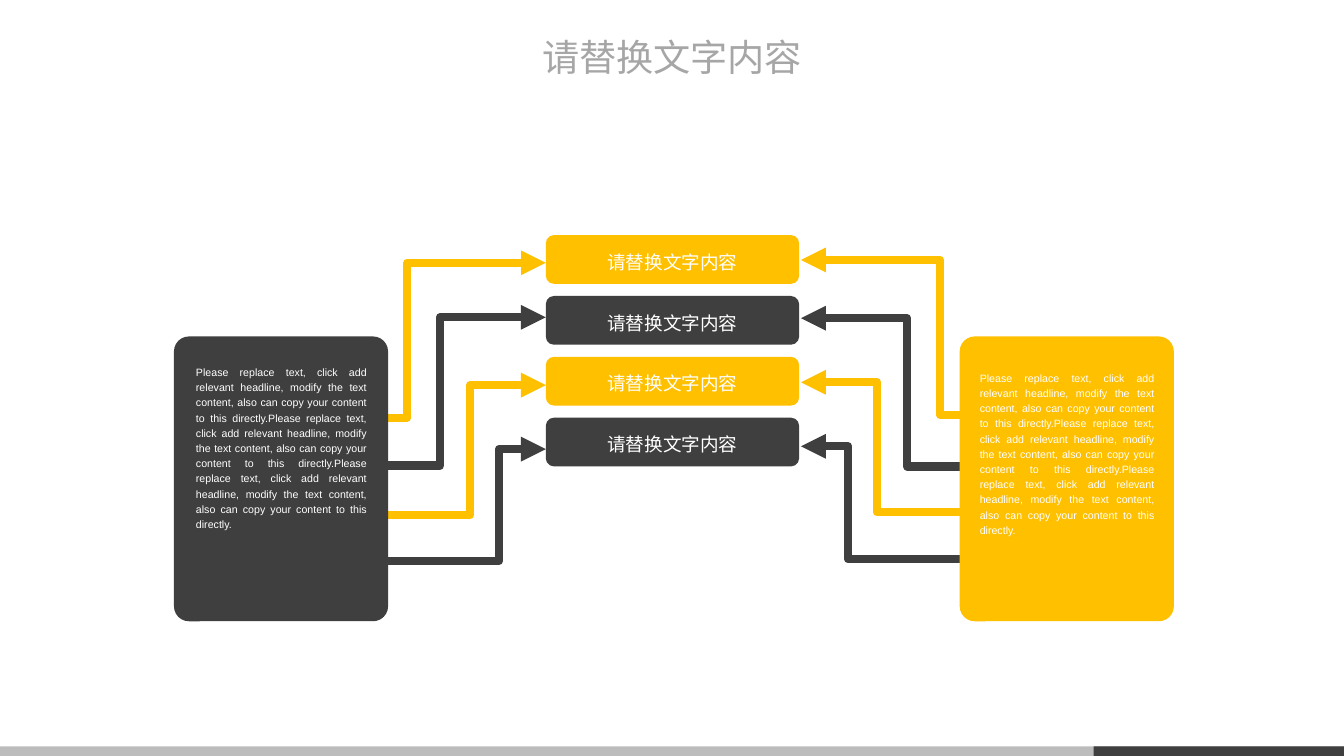
import pptx
import pptx.util
import pptx.oxml.ns
import pptx.dml.color
import pptx.enum.shapes
import pptx.enum.text
import lxml.etree

Inches, Pt = pptx.util.Inches, pptx.util.Pt
SHAPE = pptx.enum.shapes.MSO_SHAPE
ALIGN = pptx.enum.text.PP_ALIGN
ANCHOR = pptx.enum.text.MSO_ANCHOR
qn = pptx.oxml.ns.qn

# Content
TITLE = "请替换文字内容"
LABELS = ["请替换文字内容"] * 4
SENTENCE = ("Please replace text, click add relevant headline, modify the text content, "
            "also can copy your content to this directly.")
PANEL_TEXT = SENTENCE * 3

COLORS = {"yellow": "FFC000", "dark": "3F3F3F", "silver": "BCBCBC",
          "title": "A6A6A6", "white": "FFFFFF"}
ROW_COLORS = ["yellow", "dark", "yellow", "dark"]

# Layout in inches
PAGE_WIDTH, PAGE_HEIGHT = 14.06, 7.91
FOOTER_BARS = [(0, PAGE_WIDTH, "silver"), (11.44, 2.62, "dark")]
FOOTER_HEIGHT = 0.1
LABEL_LEFT, LABEL_WIDTH, LABEL_HEIGHT = 5.71, 2.65, 0.51
FIRST_LABEL_TOP, LAST_LABEL_TOP = 2.46, 4.37
PANEL_TOP, PANEL_WIDTH, PANEL_HEIGHT = 3.52, 2.24, 2.98
PANELS = [  # left, colour, text box
    (1.82, "dark", (2.05, 3.8, 1.79, 1.76)),
    (10.04, "yellow", (10.25, 3.86, 1.83, 1.78)),
]
BENDS = [0.447, 0.565, 0.69, 0.808]  # share of the run before each elbow
ARROWS = [  # tip x, then (start x, start y, tip y) for each row
    (5.71, [(3.09, 4.37, 2.75), (3.17, 4.87, 3.32), (3.16, 5.39, 4.03), (3.16, 5.87, 4.7)]),
    (8.38, [(11.01, 4.34, 2.72), (10.93, 4.88, 3.33), (10.94, 5.36, 4), (10.94, 5.85, 4.67)]),
]


def rgb(name):
    return pptx.dml.color.RGBColor.from_string(COLORS[name])


def apply(target, values):
    for name, value in values.items():
        setattr(target, name, value)


def add_block(page, kind, box, color):
    block = page.shapes.add_shape(kind, *map(Inches, box))
    block.shadow.inherit = False
    block.fill.solid()
    block.fill.fore_color.rgb = rgb(color)
    block.line.fill.background()
    return block


def write(shape, text, size, color, frame_format, para_format):
    frame = shape.text_frame
    apply(frame, {"word_wrap": True, **frame_format})
    para = frame.paragraphs[0]
    apply(para, para_format)
    span = para.add_run()
    span.text = text
    apply(span.font, {"size": Pt(size), "name": "Arial"})
    span.font.color.rgb = rgb(color)


def add_arrow(page, start, tip, bend, color):
    arrow = page.shapes.add_connector(
        pptx.enum.shapes.MSO_CONNECTOR.ELBOW, *map(Inches, (*start, *tip)))
    arrow.line.color.rgb = rgb(color)
    arrow.line.width = Pt(6.25)
    properties = arrow.element.spPr
    guides = properties.find(qn("a:prstGeom")).get_or_add_avLst()
    lxml.etree.SubElement(guides, qn("a:gd"), name="adj1", fmla=f"val {round(bend * 100000)}")
    lxml.etree.SubElement(properties.find(qn("a:ln")), qn("a:tailEnd"), type="triangle")
    lxml.etree.SubElement(properties, qn("a:effectLst"))


def main():
    deck = pptx.Presentation()
    apply(deck, {"slide_width": Inches(PAGE_WIDTH), "slide_height": Inches(PAGE_HEIGHT)})
    page = deck.slides.add_slide(deck.slide_layouts[5])
    no_insets = dict.fromkeys(
        ["margin_left", "margin_top", "margin_right", "margin_bottom"], 0)
    top_text = {**no_insets, "vertical_anchor": ANCHOR.TOP}

    # Footer bars
    for left, width, color in FOOTER_BARS:
        add_block(page, SHAPE.RECTANGLE,
                  (left, PAGE_HEIGHT - FOOTER_HEIGHT, width, FOOTER_HEIGHT), color)

    # Arrows from both panels to the labels
    for tip_x, routes in ARROWS:
        for (start_x, start_y, tip_y), bend, color in zip(routes, BENDS, ROW_COLORS):
            add_arrow(page, (start_x, start_y), (tip_x, tip_y), bend, color)

    # Centre labels
    pitch = (LAST_LABEL_TOP - FIRST_LABEL_TOP) / (len(LABELS) - 1)
    for row, (text, color) in enumerate(zip(LABELS, ROW_COLORS)):
        box = (LABEL_LEFT, FIRST_LABEL_TOP + row * pitch, LABEL_WIDTH, LABEL_HEIGHT)
        label = add_block(page, SHAPE.ROUNDED_RECTANGLE, box, color)
        write(label, text, 14, "white", {"vertical_anchor": ANCHOR.MIDDLE},
              {"alignment": ALIGN.CENTER, "line_spacing": 1.2})

    # Side panels, which cover the arrow starts
    for left, color, text_box in PANELS:
        panel = add_block(page, SHAPE.ROUNDED_RECTANGLE,
                          (left, PANEL_TOP, PANEL_WIDTH, PANEL_HEIGHT), color)
        panel.adjustments[0] = 0.07
        body = page.shapes.add_textbox(*map(Inches, text_box))
        write(body, PANEL_TEXT, 8, "white", top_text,
              {"alignment": ALIGN.JUSTIFY, "line_spacing": 1.2, "space_before": Pt(1.6)})

    # Title
    title = page.shapes.title
    apply(title, {"left": Inches(5.47), "top": Inches(0.22),
                  "width": Inches(3.12), "height": Inches(0.55)})
    write(title, TITLE, 28, "title",
          {**top_text, "auto_size": pptx.enum.text.MSO_AUTO_SIZE.NONE},
          {"alignment": ALIGN.CENTER, "line_spacing": 1.3})

    deck.save("out.pptx")


if __name__ == "__main__":
    main()
